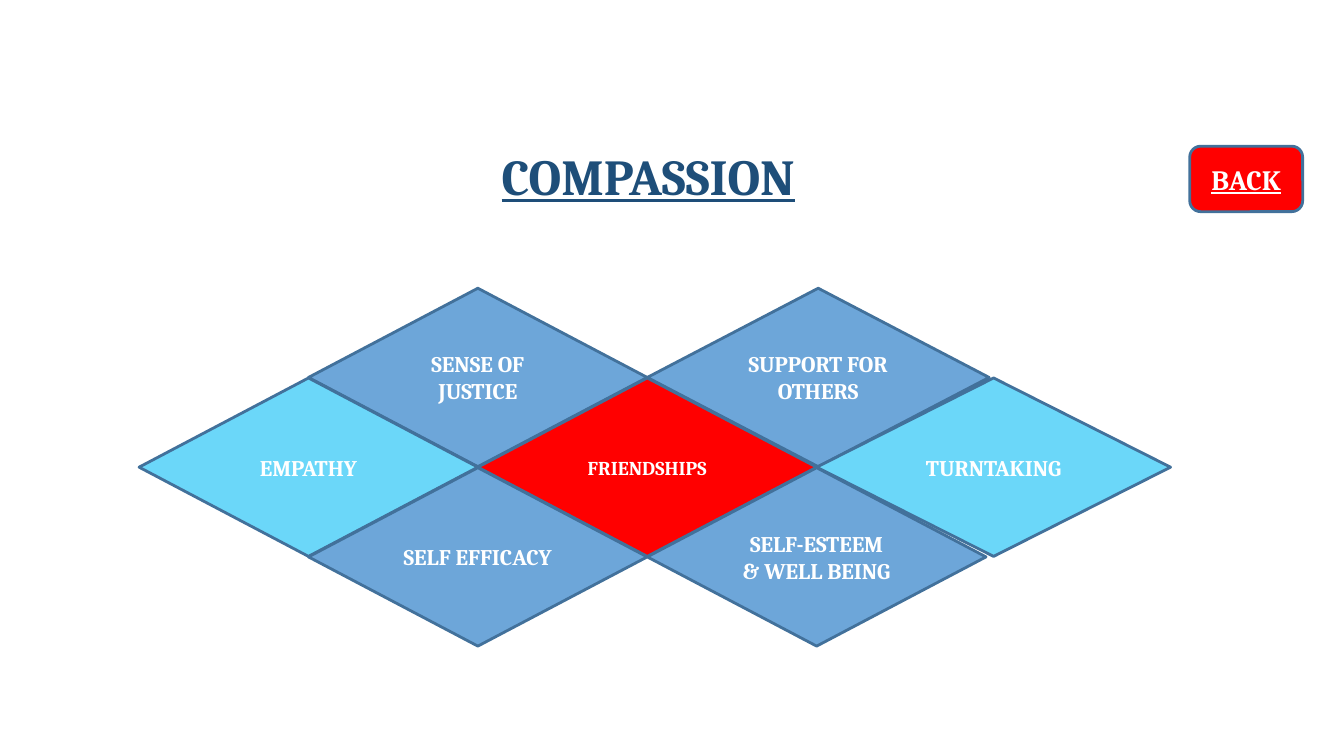
import pptx
import pptx.util
import pptx.dml.color
import pptx.enum.shapes
import pptx.enum.text
from dataclasses import dataclass

TITLE = "COMPASSION"
BACK = "BACK"
DIAMONDS = [
    {"text": "SENSE OF JUSTICE", "column": 1, "row": 0, "fill": "blue"},
    {"text": "SUPPORT FOR OTHERS", "column": 3, "row": 0, "fill": "blue", "width": 339},
    {"text": "EMPATHY", "column": 0, "row": 1, "fill": "sky"},
    {"text": "FRIENDSHIPS", "column": 2, "row": 1, "fill": "red", "size": "small"},
    {"text": "TURNTAKING", "column": 4, "row": 1, "fill": "sky", "width": 351},
    {"text": "SELF-ESTEEM & WELL BEING", "column": 3, "row": 2, "fill": "blue"},
    {"text": "SELF EFFICACY", "column": 1, "row": 2, "fill": "blue"},
]


@dataclass(frozen=True)
class Theme:
    font: str = "Cambria"
    navy: str = "1E4E79"
    blue: str = "6DA6D9"
    sky: str = "6BD7F9"
    red: str = "FF0000"
    white: str = "FFFFFF"
    outline: str = "42719B"
    line: int = 2
    title: int = 36
    button: int = 20
    label: int = 16
    small: int = 14


THEME = Theme()
EMU_PER_PX = 9144
PAGE_SIZE = (1333, 750)
TITLE_BOX = (34, 142, 1218, 71)
BACK_BOX = (1180, 145, 112, 65)
GRID_LEFT, GRID_TOP = 138, 286
COLUMN_STEP, ROW_STEP = 168, 89
DIAMOND_WIDTH, DIAMOND_HEIGHT = 2 * COLUMN_STEP, 177


def px(*lengths):
    return [pptx.util.Emu(length * EMU_PER_PX) for length in lengths]


def color(name):
    return pptx.dml.color.RGBColor.from_string(getattr(THEME, name))


def write(shape, text, size="label", ink="white", underline=False, spacing=1.0):
    frame = shape.text_frame
    frame.word_wrap = True
    frame.auto_size = pptx.enum.text.MSO_AUTO_SIZE.NONE
    frame.vertical_anchor = pptx.enum.text.MSO_ANCHOR.MIDDLE
    para = frame.paragraphs[0]
    para.alignment = pptx.enum.text.PP_ALIGN.CENTER
    para.line_spacing = spacing
    span = para.add_run()
    span.text = text
    span.font.name = THEME.font
    span.font.size = pptx.util.Pt(getattr(THEME, size))
    span.font.bold = True
    span.font.underline = underline
    span.font.color.rgb = color(ink)


def add_block(page, kind, box, fill):
    shape = page.shapes.add_shape(kind, *px(*box))
    shape.shadow.inherit = False
    shape.fill.solid()
    shape.fill.fore_color.rgb = color(fill)
    shape.line.color.rgb = color("outline")
    shape.line.width = pptx.util.Pt(THEME.line)
    return shape


def main():
    kinds = pptx.enum.shapes.MSO_SHAPE
    deck = pptx.Presentation()
    deck.slide_width, deck.slide_height = px(*PAGE_SIZE)
    page = deck.slides.add_slide(deck.slide_layouts.get_by_name("Title Only"))

    title = page.shapes.title
    title.left, title.top, title.width, title.height = px(*TITLE_BOX)
    write(title, TITLE, size="title", ink="navy", underline=True, spacing=0.9)

    for diamond in DIAMONDS:
        box = (
            GRID_LEFT + diamond["column"] * COLUMN_STEP,
            GRID_TOP + diamond["row"] * ROW_STEP,
            diamond.get("width", DIAMOND_WIDTH),
            DIAMOND_HEIGHT,
        )
        shape = add_block(page, kinds.FLOWCHART_DECISION, box, diamond["fill"])
        write(shape, diamond["text"], size=diamond.get("size", "label"))

    button = add_block(page, kinds.ROUNDED_RECTANGLE, BACK_BOX, "red")
    write(button, BACK, size="button", underline=True)

    deck.save("out.pptx")


if __name__ == "__main__":
    main()
